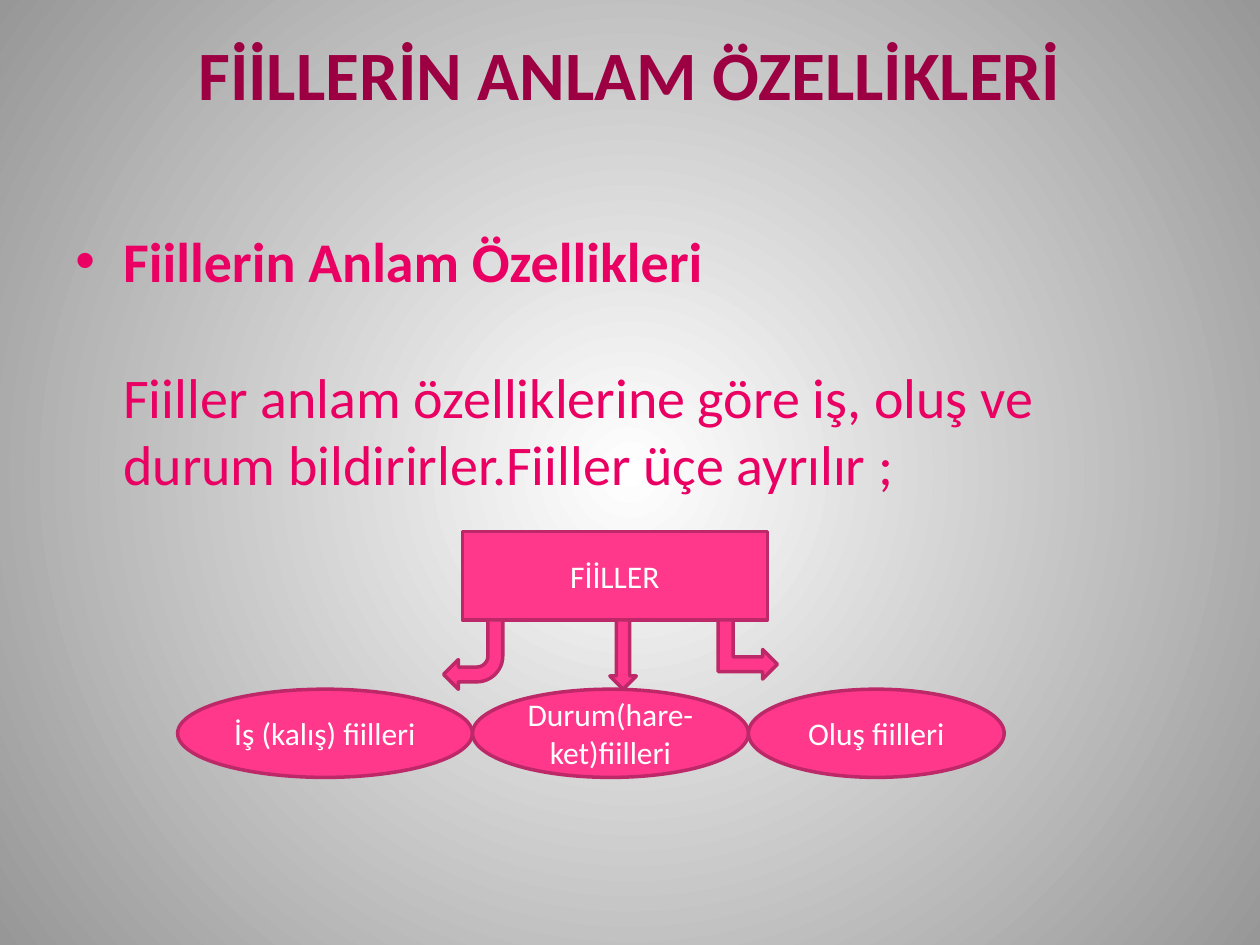
from pptx import Presentation
from pptx.dml.color import RGBColor
from pptx.enum.shapes import MSO_SHAPE as Form
from pptx.enum.text import MSO_ANCHOR, PP_ALIGN
from pptx.oxml import parse_xml
from pptx.oxml.ns import nsdecls, qn
from pptx.util import Inches, Pt

# Content
TITLE = "FİİLLERİN ANLAM ÖZELLİKLERİ"
HEAD = "Fiillerin Anlam Özellikleri"
BODY = "Fiiller anlam özelliklerine göre iş, oluş ve durum bildirirler.Fiiller üçe ayrılır ;"
ROOT = "FİİLLER"
KINDS = [("İş (kalış) fiilleri", 2.34), ("Durum(hare-ket)fiilleri", 2.19), ("Oluş fiilleri", 2.03)]
# form, left, width, height, turn
ARROWS = [
    (Form.DOWN_ARROW, 4.84, 0.21, 0.55, 0),
    (Form.BENT_UP_ARROW, 5.7, 0.47, 0.47, 90),
    (Form.BENT_ARROW, 3.52, 0.47, 0.55, 180),
]

THEME = {
    "font": "Calibri", "title": "9C0042", "body": "E90062", "fill": "FF388C",
    "line": "BD2968", "label": "FFFFFF", "inner": "FFFFFF", "outer": "979797",
    "big": 39.6, "mid": 32, "small": 18, "edge": 2,
}

# Grid
WIDE, HIGH = 10, 7.5
EDGE = WIDE * 0.05
ROW = 0.7
TOP = 4.22
GAP = 0.55
LEFT = 1.41
HANG = Inches(0.38)


def tint(name):
    return RGBColor.from_string(THEME[name])


def write(par, text, size, color, bold=False):
    run = par.add_run()
    run.text = text
    font = run.font
    font.name, font.size, font.bold = THEME["font"], Pt(THEME[size]), bold
    font.color.rgb = tint(color)


def add_box(slide, top, high):
    box = slide.shapes.add_textbox(*map(Inches, (EDGE, top, WIDE - 2 * EDGE, high)))
    box.text_frame.word_wrap = True
    return box.text_frame


def add_form(slide, form, left, top, wide, high, text="", turn=0):
    shape = slide.shapes.add_shape(form, *map(Inches, (left, top, wide, high)))
    shape.shadow.inherit = False
    shape.rotation = turn
    shape.fill.solid()
    shape.fill.fore_color.rgb = tint("fill")
    shape.line.color.rgb = tint("line")
    shape.line.width = Pt(THEME["edge"])
    if text:
        frame = shape.text_frame
        frame.word_wrap = True
        frame.vertical_anchor = MSO_ANCHOR.MIDDLE
        par = frame.paragraphs[0]
        par.alignment = PP_ALIGN.CENTER
        write(par, text, "small", "label")


def paint_back(slide):
    fill = slide.background.fill
    fill.gradient()
    for stop, name in zip(fill.gradient_stops, ("inner", "outer")):
        stop.color.rgb = tint(name)
    grad = slide.background._cSld.find(".//" + qn("a:gradFill"))
    ray = parse_xml(
        f'<a:path {nsdecls("a")} path="circle">'
        '<a:fillToRect l="50000" t="50000" r="50000" b="50000"/></a:path>')
    grad.replace(grad.find(qn("a:lin")), ray)


def main():
    deck = Presentation()
    deck.slide_width, deck.slide_height = Inches(WIDE), Inches(HIGH)
    slide = deck.slides.add_slide(deck.slide_layouts[6])
    paint_back(slide)

    # Title
    frame = add_box(slide, 0.25, 1.25)
    frame.margin_top = 0
    par = frame.paragraphs[0]
    par.alignment = PP_ALIGN.CENTER
    write(par, TITLE, "big", "title", True)

    # Bulleted heading with its text below
    frame = add_box(slide, 1.75, 4.95)
    head, body = frame.paragraphs[0], frame.add_paragraph()
    write(head, HEAD, "mid", "body", True)
    write(body, BODY, "mid", "body")
    body.space_before = Pt(39)
    for par, dent in ((head, -HANG), (body, 0)):
        props = par._p.get_or_add_pPr()
        props.set("marL", str(HANG))
        props.set("indent", str(dent))
    head._p.pPr.append(parse_xml(f'<a:buFont {nsdecls("a")} typeface="Arial"/>'))
    head._p.pPr.append(parse_xml(f'<a:buChar {nsdecls("a")} char="•"/>'))

    # Diagram: root, arrows, then kinds side by side
    add_form(slide, Form.FLOWCHART_PROCESS, 3.67, TOP, 2.42, ROW, ROOT)
    for form, left, wide, high, turn in ARROWS:
        add_form(slide, form, left, TOP + ROW, wide, high, turn=turn)
    left = LEFT
    for text, wide in KINDS:
        add_form(slide, Form.OVAL, left, TOP + ROW + GAP, wide, ROW, text)
        left += wide

    deck.save("out.pptx")


if __name__ == "__main__":
    main()
